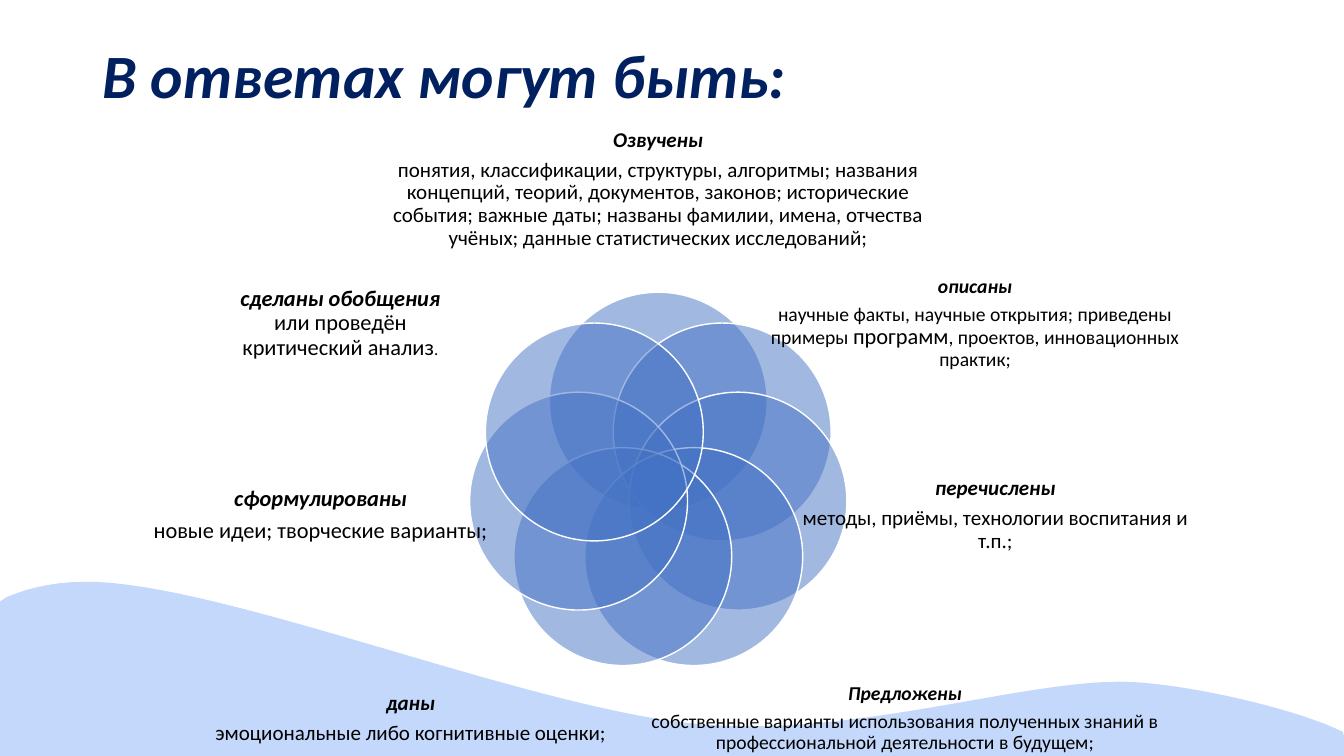
from math import cos, pi, sin

from lxml import etree
from pptx import Presentation
from pptx.dml.color import RGBColor
from pptx.enum.shapes import MSO_SHAPE
from pptx.enum.text import MSO_ANCHOR, MSO_AUTO_SIZE, PP_ALIGN
from pptx.oxml.ns import qn
from pptx.util import Cm, Pt

OVAL = MSO_SHAPE.OVAL
TOP, MIDDLE = MSO_ANCHOR.TOP, MSO_ANCHOR.MIDDLE
NO_AUTOFIT = MSO_AUTO_SIZE.NONE
LEFT, CENTER = PP_ALIGN.LEFT, PP_ALIGN.CENTER
NAVY = RGBColor(0x00, 0x20, 0x60)
BLACK = RGBColor(0x00, 0x00, 0x00)
WHITE = RGBColor(0xFF, 0xFF, 0xFF)
PETAL_BLUE = RGBColor(0x44, 0x72, 0xC4)
WAVE_BLUE = RGBColor(0xC4, 0xD8, 0xFB)
FONT = "Calibri"
WIDTH, HEIGHT = 33.87, 19.05


def add_span(para, text, size, color, strong):
    span = para.add_run()
    span.text = text
    span.font.name = FONT
    span.font.size = Pt(size)
    span.font.color.rgb = color
    span.font.bold = span.font.italic = strong


def curve_points(start, first, second, end, steps=30):
    points = []
    for step in range(1, steps + 1):
        t = step / steps
        weights = ((1 - t) ** 3, 3 * t * (1 - t) ** 2, 3 * t ** 2 * (1 - t), t ** 3)
        x, y = (sum(w * c for w, c in zip(weights, axis))
                for axis in zip(start, first, second, end))
        points.append((Cm(min(max(x, 0), WIDTH)), Cm(min(y, HEIGHT))))
    return points


deck = Presentation()
deck.slide_width, deck.slide_height = Cm(WIDTH), Cm(HEIGHT)
page = deck.slides.add_slide(deck.slide_layouts[5])

WAVE = [(-2.44, 18.34), (-2.39, 17.35), (-1.14, 14.68), (2.13, 14.66),
        (5.38, 14.63), (12.75, 17.63), (17.09, 18.19),
        (21.41, 18.75), (26.04, 16.97), (28.75, 17.2),
        (31.47, 17.42), (36.86, 18.97), (33.35, 19.58)]
outline = []
for index in range(0, len(WAVE) - 1, 3):
    outline += curve_points(*WAVE[index:index + 4])
builder = page.shapes.build_freeform(Cm(0), Cm(HEIGHT))
builder.add_line_segments(outline + [(Cm(WIDTH), Cm(HEIGHT))], close=True)
wave = builder.convert_to_shape()
wave.shadow.inherit = False
wave.fill.solid()
wave.fill.fore_color.rgb = WAVE_BLUE
wave.line.fill.background()

title = page.shapes.title
title.left, title.top, title.width, title.height = Cm(2.33), Cm(1.01), Cm(29.21), Cm(3.68)
title.text_frame.auto_size = NO_AUTOFIT
title.text_frame.vertical_anchor = TOP
para = title.text_frame.paragraphs[0]
para.alignment = LEFT
para.line_spacing = 0.9
add_span(para, "В ответах могут быть:", 44, NAVY, True)

ANSWERS = [
    ((9.6, 3.1, 13.97, 3.35), [
        [("Озвучены", 15, True)],
        [("понятия, классификации, структуры, алгоритмы; названия концепций, теорий, "
          "документов, законов; исторические события; важные даты; названы фамилии, "
          "имена, отчества учёных; данные статистических исследований;", 15, False)]]),
    ((19.23, 6.3, 10.69, 3.71), [
        [("описаны", 14, True)],
        [("научные факты, научные открытия; приведены примеры ", 14, False),
         ("программ", 16, False),
         (", проектов, инновационных практик;", 14, False)]]),
    ((20.17, 11, 9.83, 3.96), [
        [("перечислены", 15, True)],
        [("методы, приёмы, технологии воспитания и т.п.;", 15, False)]]),
    ((15.29, 15.32, 15.04, 5.59), [
        [("Предложены", 14, True)],
        [("собственные варианты использования полученных знаний в "
          "профессиональной деятельности в будущем;", 14, False)]]),
    ((4.24, 16.31, 12.22, 3.61), [
        [("даны", 15, True)],
        [("эмоциональные либо когнитивные оценки;", 15, False)]]),
    ((3.56, 11, 9.04, 3.96), [
        [("сформулированы", 16, True)],
        [("новые идеи; творческие варианты;", 16, False)]]),
    ((5.61, 6.3, 5.94, 3.71), [
        [("сделаны обобщения", 16, True),
         (" или проведён критический анализ", 16, False),
         (".", 12, False)]]),
]
CENTER_X, CENTER_Y = 16.59, 12.17
RING_RADIUS, PETAL_SIZE = 2.06, 5.49

for index, (place, paragraphs) in enumerate(ANSWERS):
    angle = 2 * pi * index / len(ANSWERS)
    left = CENTER_X + RING_RADIUS * sin(angle) - PETAL_SIZE / 2
    top = CENTER_Y - RING_RADIUS * cos(angle) - PETAL_SIZE / 2
    petal = page.shapes.add_shape(OVAL, Cm(left), Cm(top), Cm(PETAL_SIZE), Cm(PETAL_SIZE))
    petal.shadow.inherit = False
    petal.fill.solid()
    petal.fill.fore_color.rgb = PETAL_BLUE
    color = petal.fill._xPr.find(qn("a:solidFill"))[0]
    etree.SubElement(color, qn("a:alpha"), val="50000")
    petal.line.color.rgb = WHITE
    petal.line.width = Pt(1)

    box = page.shapes.add_textbox(*(Cm(length) for length in place))
    frame = box.text_frame
    frame.word_wrap = True
    frame.vertical_anchor = MIDDLE
    frame.margin_left = frame.margin_right = frame.margin_top = frame.margin_bottom = 0
    for number, spans in enumerate(paragraphs):
        para = frame.add_paragraph() if number else frame.paragraphs[0]
        para.alignment = CENTER
        para.line_spacing = 0.9
        para.space_after = Pt(0.35 * spans[0][1])
        for text, size, strong in spans:
            add_span(para, text, size, BLACK, strong)

deck.save("out.pptx")
